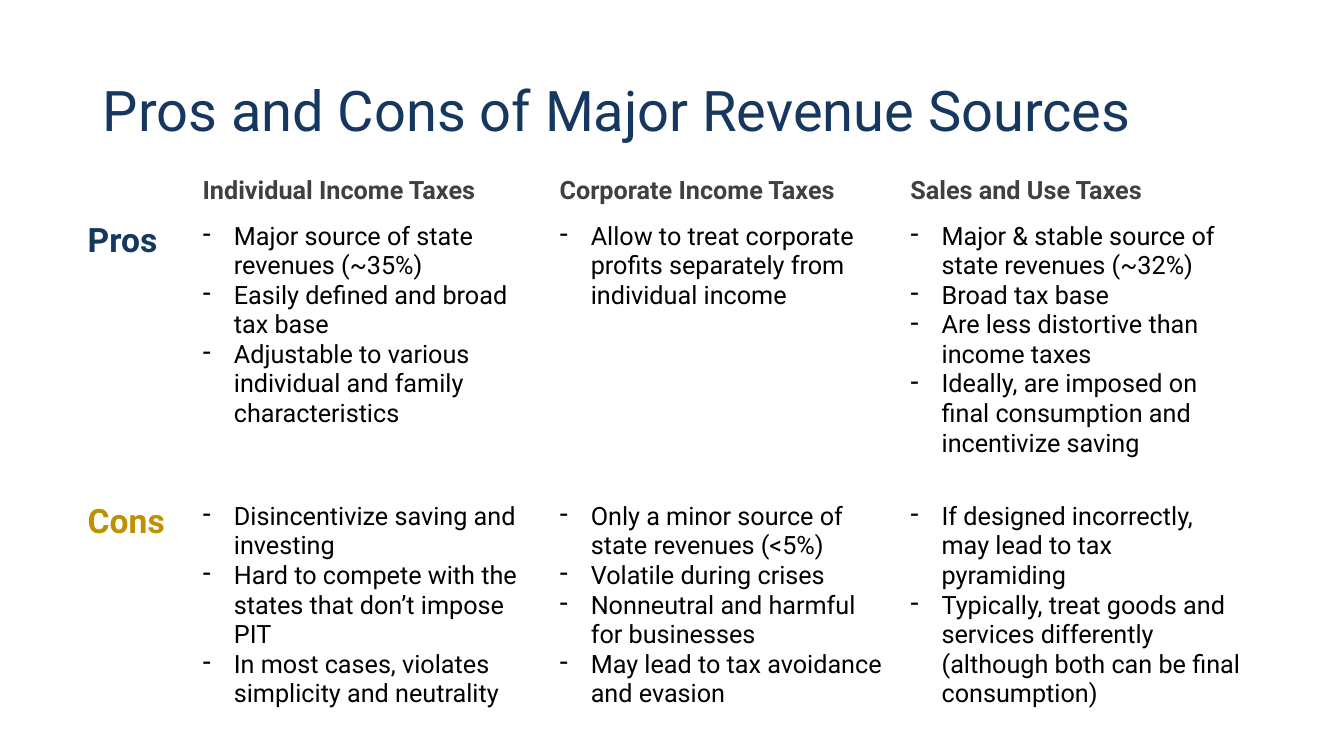
from lxml.etree import SubElement
from pptx import Presentation
from pptx.dml.color import RGBColor
from pptx.enum.text import MSO_ANCHOR, MSO_AUTO_SIZE, PP_ALIGN
from pptx.oxml.ns import qn
from pptx.util import Inches, Pt

FONT = "Roboto"
COLORS = {"navy": "163860", "gold": "BF9000", "heading": "404040", "body": "000000"}
COLUMN_WIDTHS = [1.14, 3.54, 3.48, 3.48]
ROW_HEIGHTS = [0.45, 2.78, 2.2]
BULLET_INDENT = Inches(0.31)

TAXES = ["Individual Income Taxes", "Corporate Income Taxes", "Sales and Use Taxes"]

# Row label, its colour, and the points for each tax
ARGUMENTS = [
    ("Pros", "navy", [
        ["Major source of state revenues (~35%)",
         "Easily defined and broad tax base",
         "Adjustable to various individual and family characteristics"],
        ["Allow to treat corporate profits separately from individual income"],
        ["Major & stable source of state revenues (~32%)",
         "Broad tax base",
         "Are less distortive than income taxes",
         "Ideally, are imposed on final consumption and incentivize saving"],
    ]),
    ("Cons", "gold", [
        ["Disincentivize saving and investing",
         "Hard to compete with the states that don’t impose PIT",
         "In most cases, violates simplicity and neutrality"],
        ["Only a minor source of state revenues (<5%)",
         "Volatile during crises",
         "Nonneutral and harmful for businesses",
         "May lead to tax avoidance and evasion"],
        ["If designed incorrectly, may lead to tax pyramiding",
         "Typically, treat goods and services differently "
         "(although both can be final consumption)"],
    ]),
]


def add_text(paragraph, text, size, color, bold=False):
    run = paragraph.add_run()
    run.text = text
    run.font.name = FONT
    run.font.size = Pt(size)
    run.font.bold = bold
    run.font.color.rgb = RGBColor.from_string(COLORS[color])


def add_points(cell, points):
    frame = cell.text_frame
    for index, point in enumerate(points):
        paragraph = frame.paragraphs[0] if index == 0 else frame.add_paragraph()
        properties = paragraph._p.get_or_add_pPr()
        properties.set("marL", str(BULLET_INDENT))
        properties.set("indent", str(-BULLET_INDENT))
        SubElement(properties, qn("a:buChar"), char="-")
        add_text(paragraph, point, 18, "body")


def place_title(slide, left, top, width, height):
    title = slide.shapes.title
    title.left, title.top, title.width, title.height = map(
        Inches, (left, top, width, height))
    frame = title.text_frame
    frame.auto_size = MSO_AUTO_SIZE.NONE
    frame.vertical_anchor = MSO_ANCHOR.MIDDLE
    heading = frame.paragraphs[0]
    heading.alignment = PP_ALIGN.LEFT
    heading.line_spacing = 0.9
    add_text(heading, "Pros and Cons of Major Revenue Sources", 40, "navy")


def place_comparison(slide, left, top):
    comparison = slide.shapes.add_table(
        len(ROW_HEIGHTS), len(COLUMN_WIDTHS), Inches(left), Inches(top),
        Inches(sum(COLUMN_WIDTHS)), Inches(sum(ROW_HEIGHTS))).table
    comparison.first_row = comparison.horz_banding = False
    for column, width in zip(comparison.columns, COLUMN_WIDTHS):
        column.width = Inches(width)
    for row, height in zip(comparison.rows, ROW_HEIGHTS):
        row.height = Inches(height)
    for cell in comparison.iter_cells():
        cell.fill.background()

    # Tax headings
    for column, tax in enumerate(TAXES, start=1):
        heading = comparison.cell(0, column).text_frame.paragraphs[0]
        add_text(heading, tax, 18, "heading", bold=True)

    # Pros and cons
    for row, (label, color, points_by_tax) in enumerate(ARGUMENTS, start=1):
        row_label = comparison.cell(row, 0).text_frame.paragraphs[0]
        add_text(row_label, label, 24, color, bold=True)
        for column, points in enumerate(points_by_tax, start=1):
            add_points(comparison.cell(row, column), points)


def main():
    presentation = Presentation()
    presentation.slide_width = Inches(13.33)
    presentation.slide_height = Inches(7.5)
    slide = presentation.slides.add_slide(presentation.slide_layouts[5])
    place_title(slide, 0.92, 0.4, 11.9, 1.45)
    place_comparison(slide, 0.77, 1.7)
    presentation.save("out.pptx")


if __name__ == "__main__":
    main()
